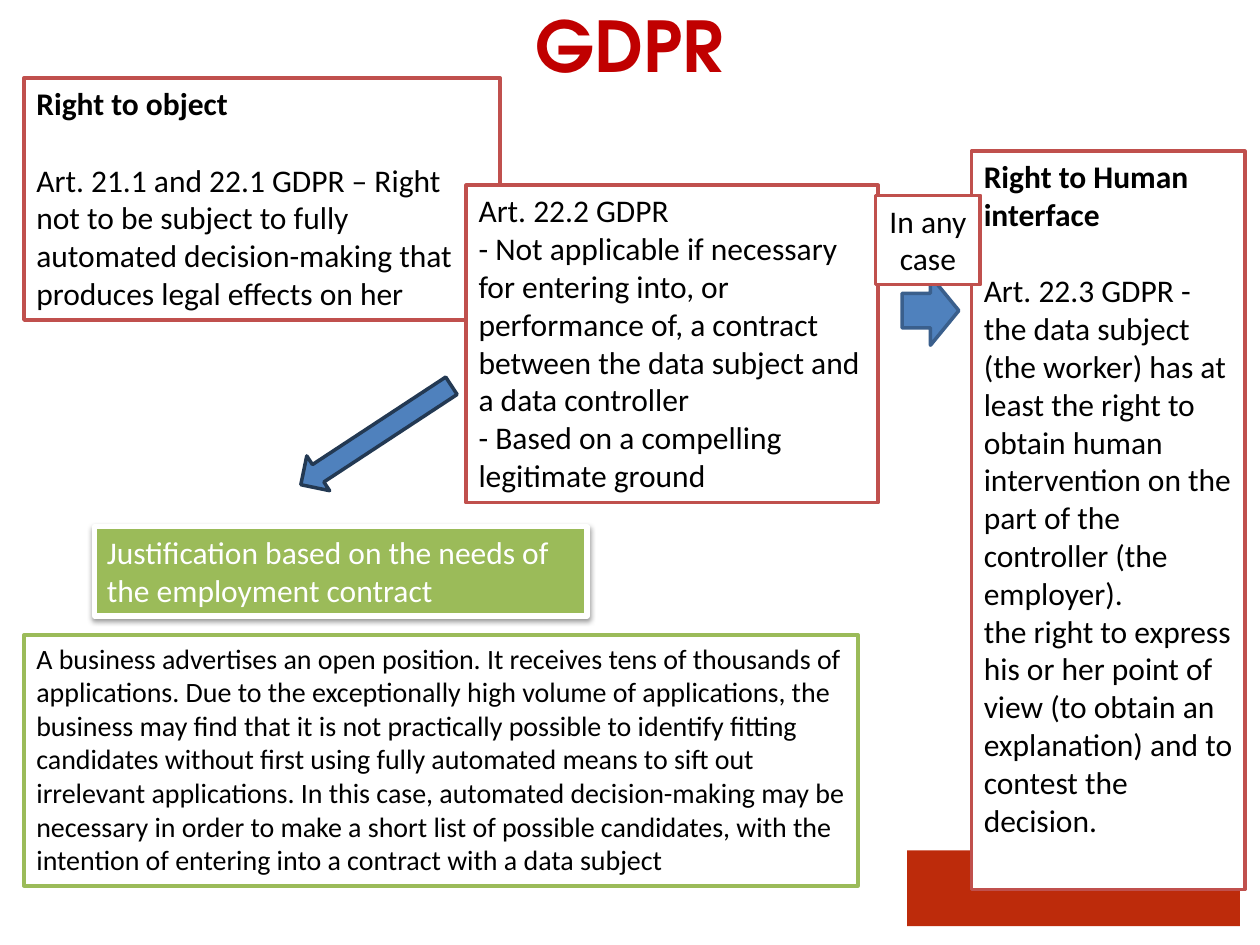
import pptx
import pptx.dml.color
import pptx.enum.shapes
import pptx.enum.text
import pptx.oxml
import pptx.oxml.ns
import pptx.util

Inches = pptx.util.Inches
Pt = pptx.util.Pt
Color = pptx.dml.color.RGBColor
Kind = pptx.enum.shapes.MSO_SHAPE
Align = pptx.enum.text.PP_ALIGN
Anchor = pptx.enum.text.MSO_ANCHOR

BLACK = Color(0x00, 0x00, 0x00)
WHITE = Color(0xFF, 0xFF, 0xFF)
RED = Color(0xC0, 0x50, 0x4D)
GREEN = Color(0x9B, 0xBB, 0x59)
BLUE = Color(0x4F, 0x81, 0xBD)
BLUE_EDGE = Color(0x3A, 0x5F, 0x8C)
NAVY_EDGE = Color(0x23, 0x39, 0x53)
TITLE_RED = Color(0xC0, 0x00, 0x00)
BAR_RED = Color(0xBD, 0x2B, 0x0B)

SHADOW = (
    f'<a:effectLst {pptx.oxml.ns.nsdecls("a")}>'
    '<a:outerShdw blurRad="39370" dist="20320" dir="5400000" rotWithShape="0">'
    '<a:srgbClr val="000000"><a:alpha val="38000"/></a:srgbClr>'
    '</a:outerShdw></a:effectLst>'
)


class RightsPage:
    body_font = "Calibri"
    title_font = "TeX Gyre Adventor"
    heading_gap = Pt(22)

    def __init__(self, deck):
        self.page = deck.slides.add_slide(deck.slide_layouts[5])

    def set_font(self, font, **values):
        for name, value in values.items():
            if name == "color":
                font.color.rgb = value
            else:
                setattr(font, name, value)

    def title(self, text, left, top, width, height):
        box = self.page.shapes.title
        places = {"left": left, "top": top, "width": width, "height": height}
        for name, value in places.items():
            setattr(box, name, Inches(value))
        frame = box.text_frame
        frame.text = text
        frame.auto_size = pptx.enum.text.MSO_AUTO_SIZE.NONE
        frame.vertical_anchor = Anchor.MIDDLE
        para = frame.paragraphs[0]
        para.alignment = Align.CENTER
        self.set_font(para.font, name=self.title_font, size=Pt(40), bold=True, color=TITLE_RED)

    def shape(self, kind, left, top, width, height, fill, line=None, weight=2, rotation=0):
        shape = self.page.shapes.add_shape(
            kind, Inches(left), Inches(top), Inches(width), Inches(height))
        shape.shadow.inherit = False
        shape.rotation = rotation
        shape.fill.solid()
        shape.fill.fore_color.rgb = fill
        if line is None:
            shape.line.fill.background()
        else:
            shape.line.color.rgb = line
            shape.line.width = Pt(weight)
        return shape

    def text_box(self, place, texts, line, heading=None, fill=WHITE, color=BLACK,
                 size=18, weight=2, align=Align.LEFT):
        box = self.shape(Kind.RECTANGLE, *place, fill, line, weight)
        frame = box.text_frame
        frame.word_wrap = True
        frame.vertical_anchor = Anchor.TOP
        lines = [heading, *texts] if heading else texts
        for index, text in enumerate(lines):
            para = frame.paragraphs[0] if index == 0 else frame.add_paragraph()
            para.alignment = align
            if heading and index == 1:
                para.space_before = self.heading_gap
            span = para.add_run()
            span.text = text
            self.set_font(span.font, name=self.body_font, size=Pt(size),
                          bold=bool(heading) and index == 0, color=color)
        return box

    def cast_shadow(self, shape):
        properties = shape.element.spPr
        properties.remove(properties.find(pptx.oxml.ns.qn("a:effectLst")))
        properties.append(pptx.oxml.parse_xml(SHADOW))


def main():
    deck = pptx.Presentation()
    deck.slide_width = Inches(10)
    deck.slide_height = Inches(7.5)
    rights = RightsPage(deck)

    # Title and corner bar
    rights.title("GDPR", 0.39, 0, 9.21, 0.71)
    rights.shape(Kind.RECTANGLE, 7.2, 6.75, 2.64, 0.6, BAR_RED)

    # Right to object and its exceptions
    rights.text_box((0.19, 0.62, 3.78, 1.92), [
        "Art. 21.1 and 22.1 GDPR – Right not to be subject to fully automated "
        "decision-making that produces legal effects on her",
    ], RED, heading="Right to object")
    rights.text_box((3.7, 1.47, 3.27, 2.52), [
        "Art. 22.2 GDPR",
        "- Not applicable if necessary for entering into, or performance of, "
        "a contract between the data subject and a data controller",
        "- Based on a compelling legitimate ground",
    ], RED)

    # Justification and example
    justification = rights.text_box(
        (0.75, 4.18, 3.91, 0.71),
        ["Justification based on the needs of the employment contract"],
        WHITE, fill=GREEN, color=WHITE, weight=3)
    rights.cast_shadow(justification)
    rights.text_box((0.19, 5.04, 6.62, 1.99), [
        "A business advertises an open position. It receives tens of thousands of "
        "applications. Due to the exceptionally high volume of applications, the "
        "business may find that it is not practically possible to identify fitting "
        "candidates without first using fully automated means to sift out irrelevant "
        "applications. In this case, automated decision-making may be necessary in "
        "order to make a short list of possible candidates, with the intention of "
        "entering into a contract with a data subject",
    ], GREEN, size=16)

    # Right to human interface
    rights.text_box((7.71, 1.2, 2.17, 5.86), [
        "Art. 22.3 GDPR - the data subject (the worker) has at least the right to obtain human",
        "intervention on the part of the controller (the employer).",
        "the right to express his or her point of view (to obtain an explanation) "
        "and to contest the decision.",
    ], RED, heading="Right to Human interface")

    # Arrows between the boxes
    rights.shape(Kind.RIGHT_ARROW, 7.16, 2.19, 0.45, 0.55, BLUE, BLUE_EDGE)
    rights.text_box((6.95, 1.55, 0.83, 0.71), ["In any case"], RED, align=Align.CENTER)
    rights.shape(Kind.DOWN_ARROW, 2.82, 2.74, 0.33, 1.43, BLUE, NAVY_EDGE, rotation=56.7)

    deck.save("out.pptx")


if __name__ == "__main__":
    main()
